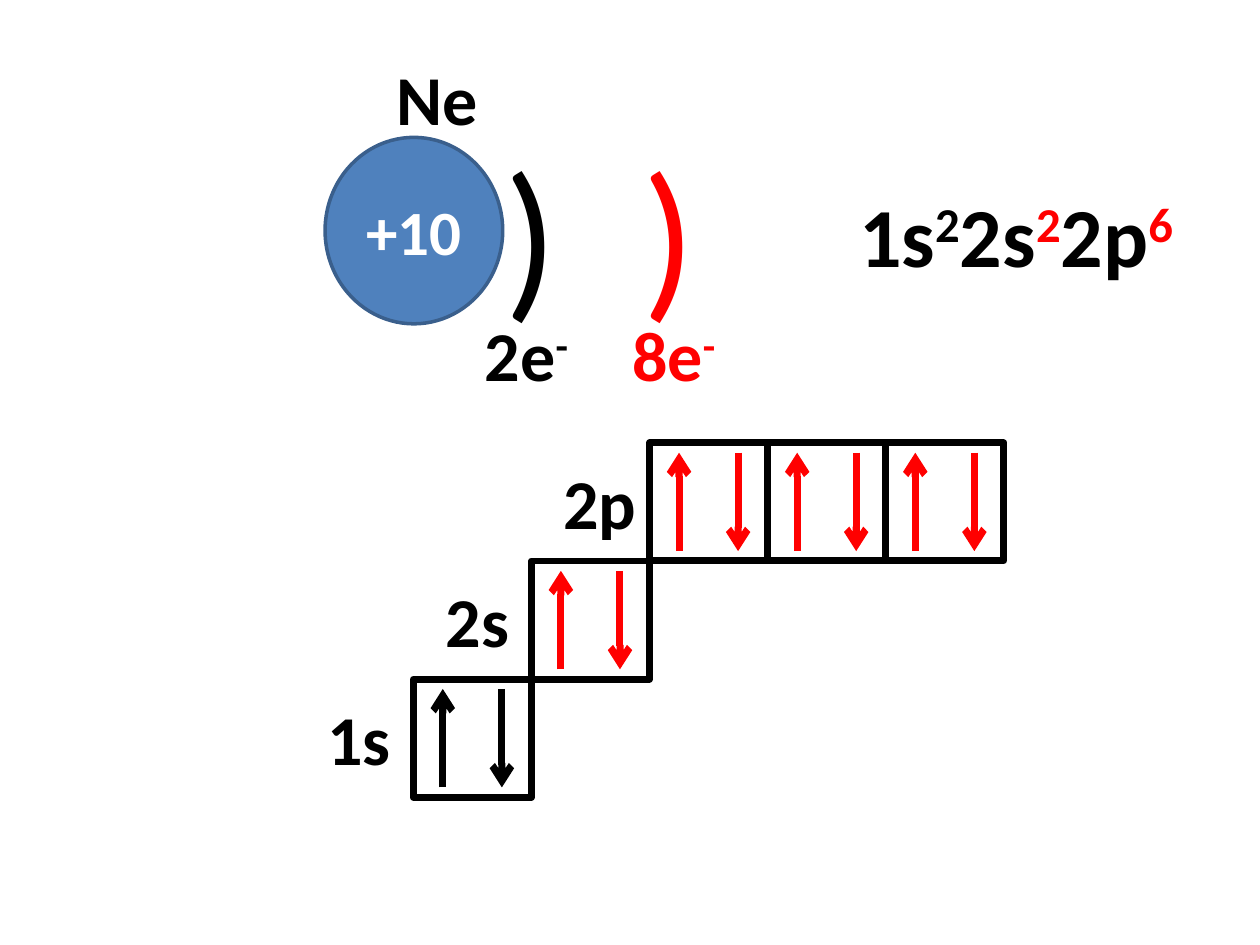
from lxml.etree import SubElement
from pptx import Presentation
from pptx.dml.color import RGBColor
from pptx.enum.shapes import MSO_CONNECTOR, MSO_SHAPE
from pptx.enum.text import MSO_ANCHOR, MSO_AUTO_SIZE, PP_ALIGN
from pptx.oxml.ns import qn
from pptx.util import Inches, Pt

BLACK, RED, WHITE = "000000", "FF0000", "FFFFFF"
BLUE, DARK_BLUE = "4F81BD", "3A5F8C"
CELL = 0.9375


def rgb(color):
    return RGBColor.from_string(color)


def set_font(font, size, color, bold=True):
    font.name = "Calibri"
    font.size = Pt(size)
    font.bold = bold
    font.color.rgb = rgb(color)


def add_text(s, x, y, w, h, parts, size=40, color=BLACK, bold=True):
    tf = s.shapes.add_textbox(Inches(x), Inches(y), Inches(w), Inches(h)).text_frame
    tf.word_wrap = False
    tf.auto_size = MSO_AUTO_SIZE.SHAPE_TO_FIT_TEXT
    p = tf.paragraphs[0]
    set_font(p.font, size, color, bold)
    for i, part in enumerate(parts):
        r = p.add_run()
        r.text = part
        if i % 2:
            r._r.get_or_add_rPr().set("baseline", "30000")
    return p


def add_nucleus(s):
    sp = s.shapes.add_shape(MSO_SHAPE.OVAL, Inches(2.58), Inches(1.09),
                            Inches(1.41), Inches(1.48))
    sp.shadow.inherit = False
    sp.fill.solid()
    sp.fill.fore_color.rgb = rgb(BLUE)
    sp.line.color.rgb = rgb(DARK_BLUE)
    sp.line.width = Pt(2)
    tf = sp.text_frame
    tf.vertical_anchor = MSO_ANCHOR.MIDDLE
    p = tf.paragraphs[0]
    p.alignment = PP_ALIGN.CENTER
    p.add_run().text = "+10"
    set_font(p.font, 36, WHITE)


def add_arrow(s, x, y1, y2, color):
    c = s.shapes.add_connector(MSO_CONNECTOR.STRAIGHT, Inches(x), Inches(y1),
                               Inches(x), Inches(y2))
    c.line.color.rgb = rgb(color)
    c.line.width = Pt(4)
    SubElement(c.line._get_or_add_ln(), qn("a:tailEnd"), type="arrow")
    SubElement(c._element.spPr, qn("a:effectLst"))


def add_orbital(s, x, y, color):
    sp = s.shapes.add_shape(MSO_SHAPE.RECTANGLE, Inches(x), Inches(y),
                            Inches(CELL), Inches(CELL))
    sp.shadow.inherit = False
    sp.fill.background()
    sp.line.color.rgb = rgb(BLACK)
    sp.line.width = Pt(4)
    top, bottom = y + CELL / 12, y + CELL * 11 / 12
    add_arrow(s, x + CELL / 4, bottom, top, color)
    add_arrow(s, x + CELL * 3 / 4, top, bottom, color)


def add_sublevel(s, step, name, label_x, label_w, count, color):
    x, y = 3.28 + step * CELL, 5.39 - step * CELL
    add_text(s, label_x, y + 0.08, label_w, 0.77, [name])
    for i in range(count):
        add_orbital(s, x + i * CELL, y, color)


def add_shell(s, arc_x, label_x, count, color):
    add_text(s, arc_x, 0.94, 0.63, 1.78, [")"], 100, color, False)
    add_text(s, label_x, 2.42, 0.88, 0.77, [count, "-"], 40, color)


def main():
    prs = Presentation()
    prs.slide_width, prs.slide_height = Inches(10), Inches(7.5)
    s = prs.slides.add_slide(prs.slide_layouts[6])
    add_nucleus(s)
    add_text(s, 3.05, 0.39, 0.85, 0.77, ["Ne"])
    add_shell(s, 3.91, 3.75, "2e", BLACK)
    add_shell(s, 5, 4.92, "8e", RED)
    add_sublevel(s, 0, "1s", 2.5, 0.71, 1, BLACK)
    add_sublevel(s, 1, "2s", 3.44, 0.71, 1, RED)
    add_sublevel(s, 2, "2p", 4.37, 0.79, 3, RED)
    p = add_text(s, 6.72, 1.41, 2.81, 0.91, ["1s", "2", "2s", "2", "2p", "6"], 48)
    for r in (p.runs[3], p.runs[5]):
        r.font.color.rgb = rgb(RED)
    prs.save("out.pptx")


if __name__ == "__main__":
    main()
